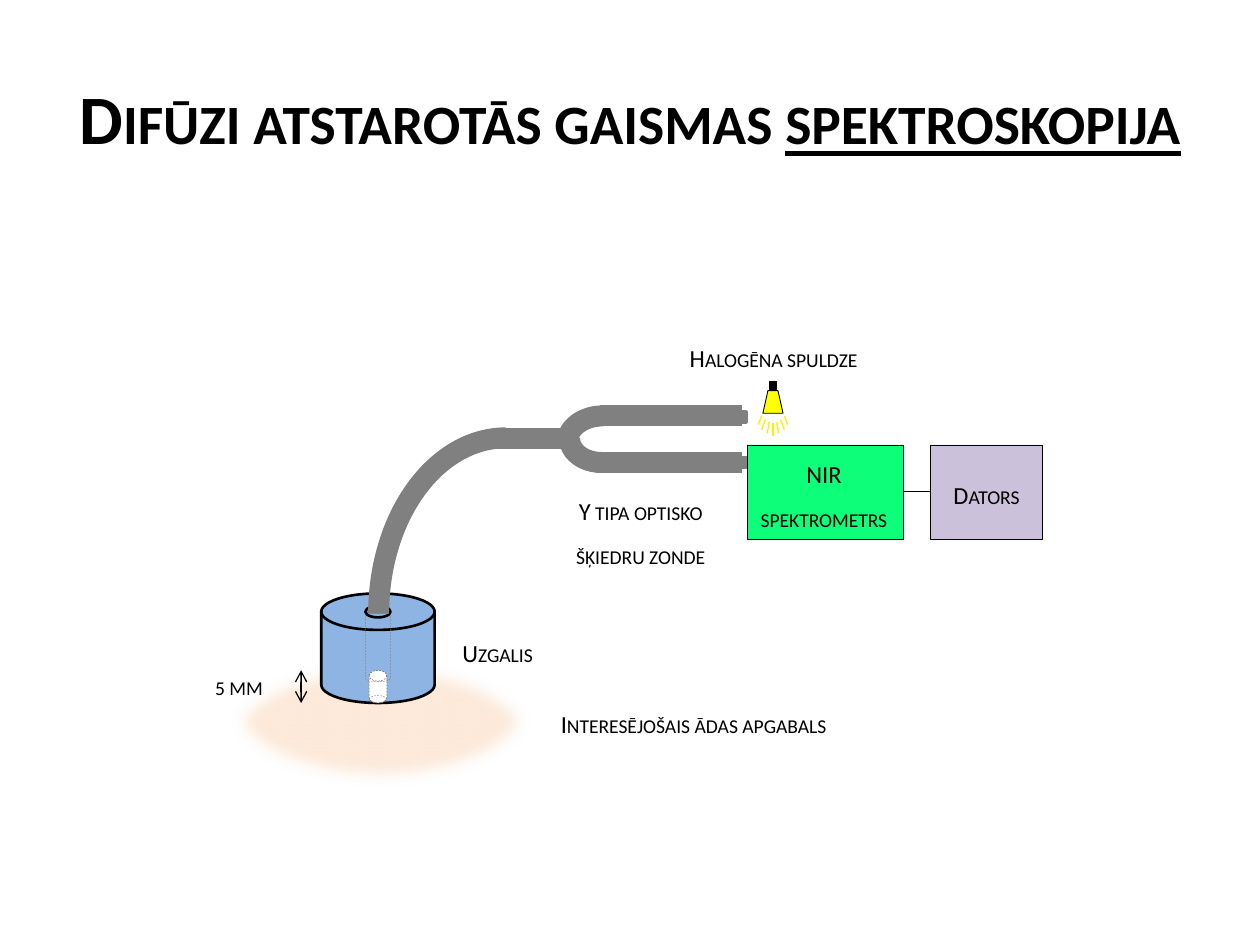
from lxml.etree import SubElement
from pptx import Presentation
from pptx.dml.color import RGBColor
from pptx.enum.dml import MSO_LINE
from pptx.enum.shapes import MSO_CONNECTOR, MSO_SHAPE as Shape
from pptx.enum.text import MSO_ANCHOR, PP_ALIGN as Align
from pptx.oxml.ns import qn
from pptx.util import Inches, Pt

BLACK = RGBColor(0, 0, 0)
WHITE = RGBColor(255, 255, 255)
GRAY = RGBColor(0x80, 0x80, 0x80)
DARK_GRAY = RGBColor(0x59, 0x59, 0x59)
SKIN = RGBColor(0xFD, 0xEA, 0xDA)
BLUE = RGBColor(0x8E, 0xB4, 0xE3)
YELLOW = RGBColor(0xFF, 0xFF, 0)
RAY = RGBColor(0xF8, 0xF2, 0)
GREEN = RGBColor(0x0D, 0xFF, 0x7A)
LILAC = RGBColor(0xCC, 0xC1, 0xDA)
FIBER = 12


class Diagram:
    """Draws styled elements on one slide, on a grid of 100 columns by 75 rows."""

    def __init__(self, deck, font="Calibri", text_size=14):
        self.slide = deck.slides.add_slide(deck.slide_layouts[5])
        self.shapes = self.slide.shapes
        self.cell = deck.slide_width / 100
        self.font = font
        self.text_size = text_size

    def grid(self, *cells):
        return [round(value * self.cell) for value in cells]

    def add_run(self, para, text, size, bold=False, underline=False):
        span = para.add_run()
        span.text = text
        span.font.name = self.font
        span.font.size = Pt(size)
        span.font.bold = bold
        span.font.underline = underline
        span.font.color.rgb = BLACK
        span.font._element.set("cap", "small")

    def title(self, area, plain, underlined):
        box = self.shapes.title
        box.left, box.top, box.width, box.height = self.grid(*area)
        box.text_frame.vertical_anchor = MSO_ANCHOR.MIDDLE
        para = box.text_frame.paragraphs[0]
        para.alignment = Align.CENTER
        self.add_run(para, plain, 39.6, bold=True)
        self.add_run(para, underlined, 39.6, bold=True, underline=True)

    def label(self, area, text, align=Align.CENTER):
        box = self.shapes.add_textbox(*self.grid(*area))
        box.text_frame.word_wrap = True
        para = box.text_frame.paragraphs[0]
        para.alignment = align
        para.line_spacing = 1.5
        self.add_run(para, text, self.text_size)

    def shape(self, kind, area, fill=None, line=None, width=0.25, dashed=False, turn=0):
        shape = self.shapes.add_shape(kind, *self.grid(*area))
        shape.shadow.inherit = False
        shape.rotation = turn
        if fill is None:
            shape.fill.background()
        else:
            shape.fill.solid()
            shape.fill.fore_color.rgb = fill
        if line is None:
            shape.line.fill.background()
        else:
            shape.line.color.rgb = line
            shape.line.width = Pt(width)
        if dashed:
            shape.line.dash_style = MSO_LINE.DASH
        return shape

    def soft_ellipse(self, area, fill, radius):
        effects = self.shape(Shape.OVAL, area, fill)._element.spPr.find(qn("a:effectLst"))
        SubElement(effects, qn("a:softEdge"), rad=str(self.grid(radius)[0]))

    def line(self, start, end, color=BLACK, width=0.75, arrows=False):
        line = self.shapes.add_connector(MSO_CONNECTOR.STRAIGHT, *self.grid(*start, *end))
        line.line.color.rgb = color
        line.line.width = Pt(width)
        if arrows:
            for tag in ("a:headEnd", "a:tailEnd"):
                SubElement(line.line._get_or_add_ln(), qn(tag), type="arrow")
        SubElement(line._element.spPr, qn("a:effectLst"))

    def fiber_arc(self, area, turn):
        self.shape(Shape.ARC, area, line=GRAY, width=FIBER, turn=turn)

    def lamp(self, middle):
        self.shape(Shape.TRAPEZOID, (middle - 0.8, 31, 1.6, 1.8), YELLOW, BLACK, 0.5)
        self.shape(Shape.RECTANGLE, (middle - 0.25, 30.3, 0.5, 0.6), BLACK, BLACK, 0.5)
        self.line((middle, 33.6), (middle, 34.6), RAY)
        rays = [(0.9, 33, 1.15, 33.7), (0.6, 33.3, 0.9, 34.1), (0.3, 33.5, 0.45, 34.4)]
        for near, top, far, bottom in rays:
            for side in (-1, 1):
                self.line((middle + side * near, top), (middle + side * far, bottom), RAY)


def main():
    deck = Presentation()
    deck.slide_width, deck.slide_height = Inches(10), Inches(7.5)
    diagram = Diagram(deck)
    diagram.title((5, 3, 90, 12.5), "Difūzi atstarotās gaismas ", "spektroskopija")
    diagram.line((71.7, 39), (73.8, 39))

    disk = Shape.FLOWCHART_MAGNETIC_DISK
    diagram.soft_ellipse((17.9, 52, 24.6, 10.6), SKIN, 1.2)
    diagram.shape(disk, (25.5, 47.1, 9, 8.7), BLUE, BLACK, 1.5)
    diagram.shape(disk, (29.3, 53.2, 1.4, 2.6), WHITE, DARK_GRAY, dashed=True)
    diagram.shape(Shape.CAN, (29, 48.2, 2, 5.9), line=GRAY, dashed=True)
    diagram.shape(Shape.OVAL, (29.3, 55.2, 1.4, 0.6), line=GRAY, dashed=True)
    diagram.shape(Shape.OVAL, (29, 48.1, 2, 0.9), line=BLACK, width=1.5)

    diagram.fiber_arc((26.2, 38.6, 27.9, 20.2), 270)
    for left, right, row in ((39.3, 45.2, 34.8), (47.6, 58.9, 33), (47.3, 58.9, 36.7)):
        diagram.line((left, row), (right, row), GRAY, FIBER)
    diagram.fiber_arc((45.7, 32.3, 4.3, 5.7), 270)
    diagram.fiber_arc((45.2, 32.9, 5, 3.8), 180)

    diagram.lamp(61.35)
    for top in (32.7, 36.3):
        diagram.shape(Shape.RECTANGLE, (58.9, top, 0.3, 0.8), GRAY, GRAY, 2)
    for left, width, fill in ((59.3, 12.4, GREEN), (73.8, 8.9, LILAC)):
        diagram.shape(Shape.RECTANGLE, (left, 35.3, width, 7.5), fill, BLACK)

    labels = [
        ((58.6, 34.8, 13.6, 8.1), "NIR spektrometrs"),
        ((73.5, 36.4, 9.6, 4.2), "Dators"),
        ((52.7, 25.6, 17.4, 4.5), "Halogēna spuldze"),
        ((42.5, 37.7, 16.7, 8.1), "Y tipa optisko šķiedru zonde"),
        ((33.8, 49, 11.4, 4.2), "Uzgalis"),
        ((42.2, 54.6, 25.7, 4.5), "Interesējošais ādas apgabals"),
    ]
    for area, text in labels:
        diagram.label(area, text)
    diagram.line((23.9, 53.2), (23.9, 55.8), arrows=True)
    diagram.label((16.1, 51.6, 8.3, 4.5), "5 mm", Align.LEFT)
    deck.save("out.pptx")


if __name__ == "__main__":
    main()
